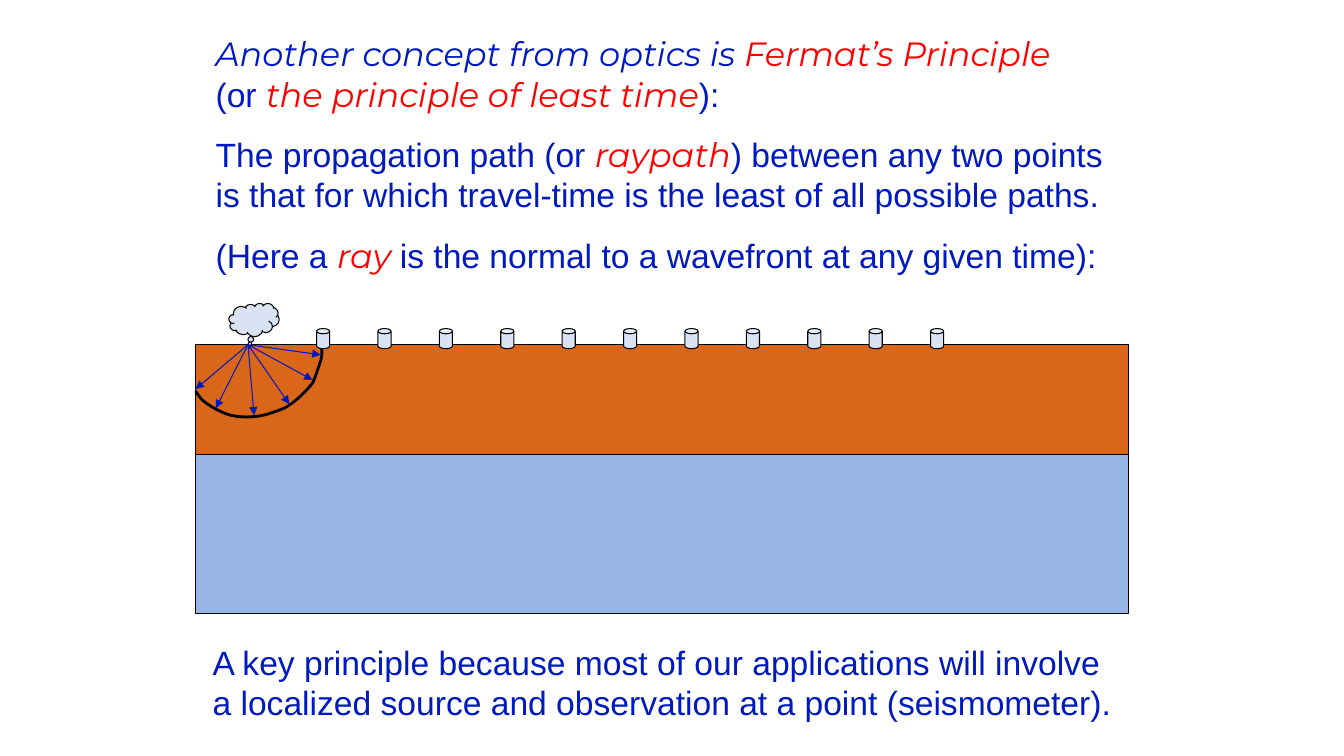
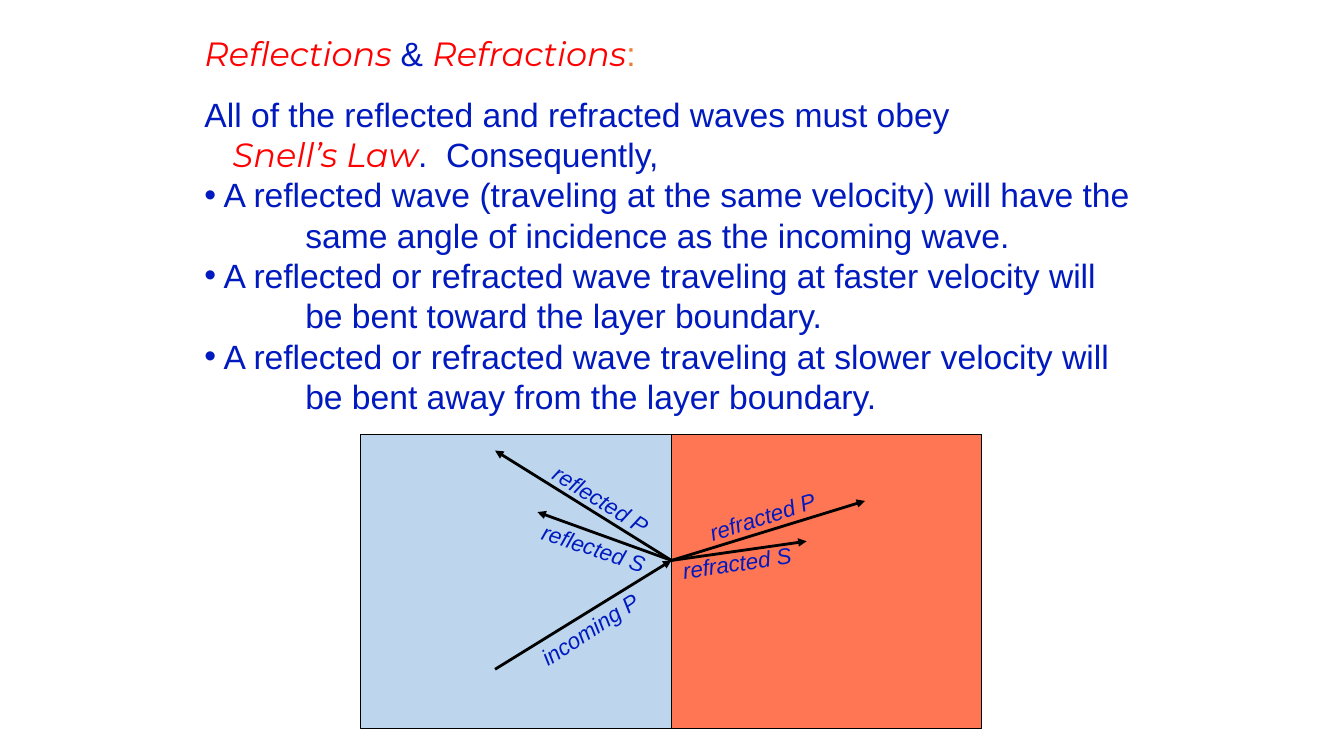
from dataclasses import dataclass

from lxml import etree
from pptx import Presentation
from pptx.dml.color import RGBColor
from pptx.enum.shapes import MSO_CONNECTOR, MSO_SHAPE
from pptx.enum.text import MSO_ANCHOR, PP_ALIGN
from pptx.oxml.ns import qn
from pptx.util import Inches, Pt

RECT, CAN, CLOUD = MSO_SHAPE.RECTANGLE, MSO_SHAPE.CAN, MSO_SHAPE.CLOUD_CALLOUT
STRAIGHT = MSO_CONNECTOR.STRAIGHT
LEFT, CENTER, TOP = PP_ALIGN.LEFT, PP_ALIGN.CENTER, MSO_ANCHOR.TOP

COLORS = {
    "text": "001ABF", "term": "FF0000", "accent": "ED7D31", "ink": "000000",
    "soil": "DA661A", "rock": "97B5E6", "device": "DAE3F3",
    "slow": "9DC3E6", "fast": "FF3300", "paper": "FFFFFF",
}
# Run styles: font, colour, italic
STYLES = {
    "plain": ("Arial", "text", False),
    "label": ("Arial", "text", True),
    "accent": ("Arial", "accent", False),
    "lead": ("Montserrat", "text", True),
    "term": ("Montserrat", "term", True),
}
BODY_SIZE, LABEL_SIZE, LEADING = 24, 16, 1.2
BLOCK_GAP = 14.4  # points between text blocks
HAIRLINE, HEAVY = 0.75, 2


def cells(count):
    """Length of a number of grid cells; the grid has ten cells to the inch."""
    return Inches(count / 10)


@dataclass
class Box:
    x: float
    y: float
    w: float
    h: float

    def inner(self, dx, dy, w, h):
        return Box(self.x + dx, self.y + dy, w, h)

    def point(self, dx, dy):
        return cells(self.x + dx), cells(self.y + dy)

    def frame(self):
        return [cells(side) for side in (self.x, self.y, self.w, self.h)]


@dataclass
class Para:
    runs: list
    gap: float = 0       # points before the paragraph
    margin: float = 0    # left margin in cells
    bullet: bool = False


def plain(text, **layout):
    return Para([(text, "plain")], **layout)


def rgb(name):
    return RGBColor.from_string(COLORS[name])


def add_text(slide, box, paras, size=BODY_SIZE, align=LEFT, inset=1, rotation=0):
    holder = slide.shapes.add_textbox(*box.frame())
    holder.rotation = rotation
    frame = holder.text_frame
    frame.word_wrap = True
    frame.vertical_anchor = TOP
    frame.margin_left = frame.margin_right = cells(inset)
    for index, para in enumerate(paras):
        line = frame.paragraphs[0] if index == 0 else frame.add_paragraph()
        line.alignment = align
        line.line_spacing = Pt(size * LEADING)
        line.space_before = Pt(para.gap)
        props = line._p.get_or_add_pPr()
        props.set("marL", str(cells(para.margin)))
        props.set("indent", str(-cells(para.margin) if para.bullet else 0))
        if para.bullet:
            etree.SubElement(props, qn("a:buFont")).set("typeface", "Arial")
            etree.SubElement(props, qn("a:buChar")).set("char", "•")
        for text, style in para.runs:
            font_name, color, italic = STYLES[style]
            run = line.add_run()
            run.text = text
            run.font.name = font_name
            run.font.size = Pt(size)
            run.font.italic = italic
            run.font.color.rgb = rgb(color)


def add_solid(slide, kind, box, fill, opacity=100):
    solid = slide.shapes.add_shape(kind, *box.frame())
    solid.shadow.inherit = False
    solid.fill.solid()
    solid.fill.fore_color.rgb = rgb(fill)
    solid.line.color.rgb = rgb("ink")
    solid.line.width = Pt(HAIRLINE)
    if opacity < 100:
        color = solid.element.spPr.find(qn("a:solidFill"))[0]
        etree.SubElement(color, qn("a:alpha")).set("val", str(opacity * 1000))
    return solid


def add_arrow(slide, start, end, color, width):
    arrow = slide.shapes.add_connector(STRAIGHT, *start, *end)
    arrow.line.color.rgb = rgb(color)
    arrow.line.width = Pt(width)
    props = arrow.element.spPr
    etree.SubElement(props.find(qn("a:ln")), qn("a:tailEnd")).set("type", "triangle")
    etree.SubElement(props, qn("a:effectLst"))


def bezier(knots, steps=8):
    """Sample a chain of cubic curves given as start, control, control, end, ..."""
    for first in range(0, len(knots) - 1, 3):
        a, b, c, d = knots[first:first + 4]
        for step in range(1, steps + 1):
            t = step / steps
            u = 1 - t
            yield tuple(u**3 * p + 3 * u * u * t * q + 3 * u * t * t * r + t**3 * s
                        for p, q, r, s in zip(a, b, c, d))


def add_wavefront(slide, box, knots):
    builder = slide.shapes.build_freeform(*box.point(*knots[0]))
    builder.add_line_segments([box.point(*spot) for spot in bezier(knots)], close=False)
    front = builder.convert_to_shape()
    front.shadow.inherit = False
    front.fill.background()
    front.line.color.rgb = rgb("ink")
    front.line.width = Pt(HEAVY)


def draw_survey(slide, box):
    """Layered ground with a source, its rays and a row of seismometers."""
    soil_depth = 10.9
    add_solid(slide, RECT, box.inner(0, 0, box.w, soil_depth), "soil")
    add_solid(slide, RECT, box.inner(0, soil_depth, box.w, box.h - soil_depth), "rock")

    # Source
    blast = add_solid(slide, CLOUD, box.inner(3.3, -4.1, 5, 3.3), "device")
    blast.adjustments[0], blast.adjustments[1] = -0.09, 0.81

    # Wavefront
    add_wavefront(slide, box, [
        (12.5, 0), (12.5, 0.5), (12.6, 1), (12.4, 1.6),
        (12.2, 2.2), (11.9, 3.2), (11.6, 3.8),
        (11.2, 4.3), (11, 4.5), (10.5, 5),
        (10.1, 5.4), (9.5, 5.9), (8.8, 6.3),
        (8, 6.6), (7, 7), (6.1, 7.1),
        (5.2, 7.2), (4.3, 7.2), (3.5, 7),
        (2.7, 6.8), (1.8, 6.3), (1.2, 5.9),
        (0.6, 5.5), (0.3, 5.1), (0, 4.6),
    ])

    # Seismometers
    for index in range(11):
        sensor = add_solid(slide, CAN, box.inner(12 + 6.09 * index, -1.6, 1.3, 2), "device")
        sensor.adjustments[0] = 0.4

    # Rays
    for tip in [(0, 4.4), (2, 6.3), (5.8, 7), (9.3, 5.9), (11.6, 3.5), (12.4, 1)]:
        add_arrow(slide, box.point(5.2, 0), box.point(*tip), "text", HAIRLINE)


def draw_boundary(slide, box):
    """Two media and the waves that meet at their boundary."""
    half = box.w / 2
    for column, medium in enumerate(("slow", "fast")):
        add_solid(slide, RECT, box.inner(half * column, 0, half, box.h), medium, opacity=67)

    # Waves: start, end, label, label corner, label angle
    impact = (half, 12.5)
    waves = [
        ((13.3, 23.3), impact, "incoming P", (16.2, 17.5), -33),
        (impact, (13.3, 1.6), "reflected P", (17.3, 4.6), 31.7),
        (impact, (17.5, 7.7), "reflected S", (16.6, 9.4), 18.2),
        (impact, (50, 6.6), "refracted P", (33.3, 6.3), -17.8),
        (impact, (44.2, 10.6), "refracted S", (30.8, 10.9), -8.4),
    ]
    for start, end, name, corner, angle in waves:
        add_arrow(slide, box.point(*start), box.point(*end), "ink", HEAVY)
        add_text(slide, box.inner(*corner, 13, 3.7), [Para([(name, "label")])],
                 LABEL_SIZE, CENTER, inset=0, rotation=angle)


def new_slide(deck):
    slide = deck.slides.add_slide(deck.slide_layouts[6])
    slide.background.fill.solid()
    slide.background.fill.fore_color.rgb = rgb("paper")
    return slide


def fermat_slide(deck):
    slide = new_slide(deck)
    add_text(slide, Box(20.4, 2.8, 93.5, 25.2), [
        Para([("Another concept from optics is ", "lead"), ("Fermat’s Principle", "term")]),
        Para([("(or ", "plain"), ("the principle of least time", "term"), ("):", "plain")]),
        Para([("The propagation path (or ", "plain"), ("raypath", "term"),
              (") between any two points", "plain")], gap=BLOCK_GAP),
        plain("is that for which travel-time is the least of all possible paths."),
        Para([("(Here a ", "plain"), ("ray ", "term"),
              ("is the normal to a wavefront at any given time):", "plain")], gap=BLOCK_GAP),
    ])
    draw_survey(slide, Box(19.4, 34.2, 92.5, 26.7))
    add_text(slide, Box(20.1, 63.2, 92.1, 9.1), [
        plain("A key principle because most of our applications will involve"),
        plain("a localized source and observation at a point (seismometer)."),
    ])


def snell_slide(deck):
    slide = new_slide(deck)
    rules = [
        ("A reflected wave (traveling at the same velocity) will have the",
         "same angle of incidence as the incoming wave."),
        ("A reflected or refracted wave traveling at faster velocity will",
         "be bent toward the layer boundary."),
        ("A reflected or refracted wave traveling at slower velocity will",
         "be bent away from the layer boundary."),
    ]
    paras = [
        Para([("Reflections ", "term"), ("& ", "plain"), ("Refractions", "term"),
              (":", "accent")]),
        plain("All of the reflected and refracted waves must obey", gap=BLOCK_GAP),
        Para([("Snell’s Law", "term"), (".  Consequently,", "plain")], margin=2.8),
    ]
    for opening, ending in rules:
        paras += [plain(opening, margin=1.9, bullet=True), plain(ending, margin=10)]
    add_text(slide, Box(19.3, 2.8, 94.7, 39.4), paras)
    draw_boundary(slide, Box(35.8, 43.1, 61.6, 29.2))


def main():
    deck = Presentation()
    deck.slide_width, deck.slide_height = Inches(13.33), Inches(7.5)
    fermat_slide(deck)
    snell_slide(deck)
    deck.save("out.pptx")


if __name__ == "__main__":
    main()
